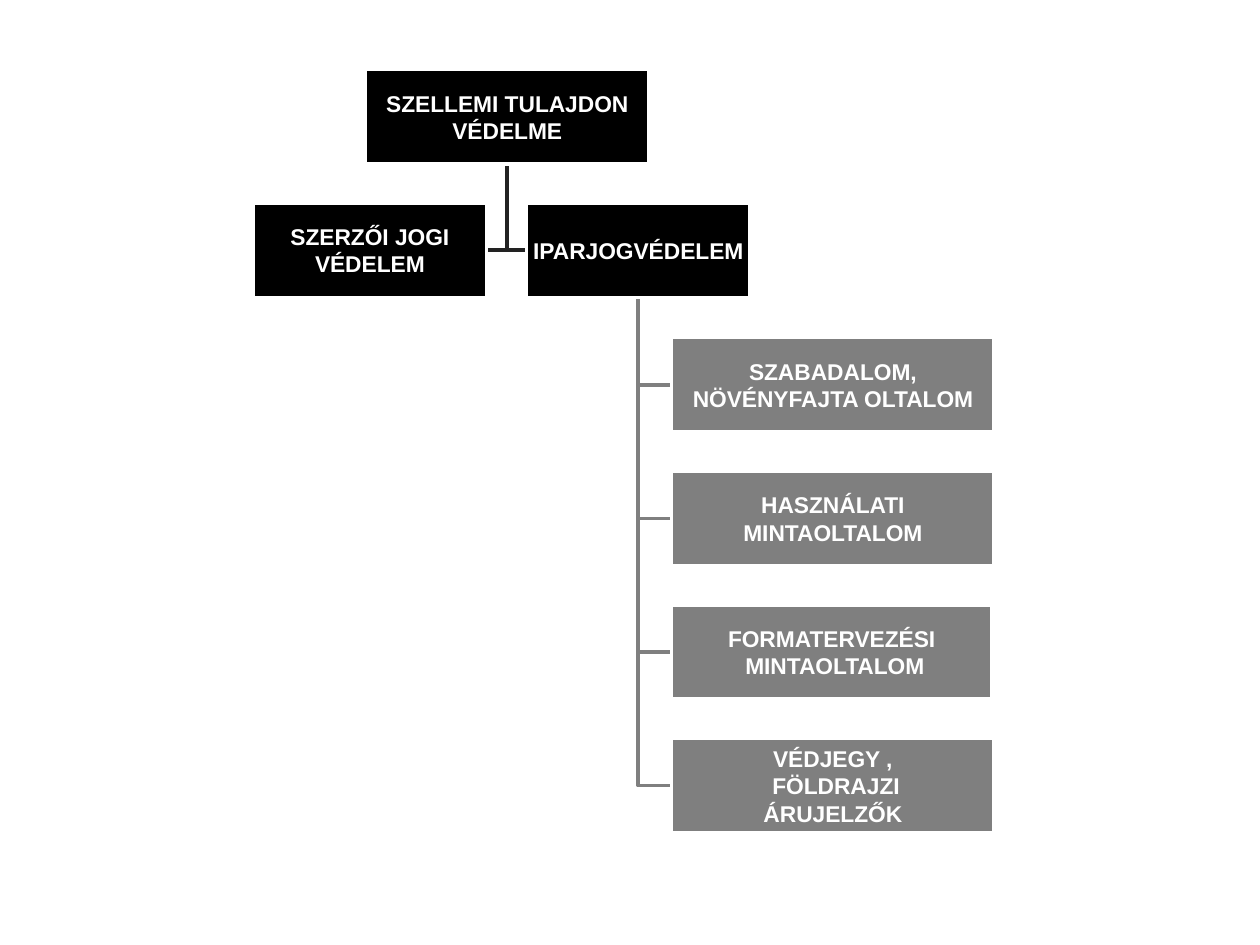
from pptx import Presentation
from pptx.dml.color import RGBColor as Rgb
from pptx.enum.shapes import MSO_SHAPE as Kind
from pptx.enum.text import MSO_ANCHOR as Anchor, PP_ALIGN as Align
from pptx.util import Inches, Pt

COLORS = {"black": "000000", "gray": "7F7F7F", "dark": "222222", "white": "FFFFFF"}
HIGH = 0.75
STEP = 1.06
TOP = 0.55


class Chart:
    font = "Arial"
    size = Pt(13)
    width = Pt(2)
    inset = Inches(0.01)

    def __init__(self, slide):
        self.slide = slide

    def color(self, name):
        return Rgb.from_string(COLORS[name])

    def border(self, shape, name):
        shape.shadow.inherit = False
        shape.line.color.rgb = self.color(name)
        shape.line.width = self.width

    def link(self, start, end, name):
        (x, y), (right, low) = start, end
        form = self.slide.shapes.build_freeform(Inches(x), Inches(y))
        turns = [(Inches(x), Inches(low)), (Inches(right), Inches(low))]
        form.add_line_segments(turns, close=False)
        shape = form.convert_to_shape()
        shape.fill.background()
        self.border(shape, name)

    def box(self, left, top, wide, fill, lines):
        shape = self.slide.shapes.add_shape(
            Kind.RECTANGLE, Inches(left), Inches(top), Inches(wide), Inches(HIGH))
        shape.fill.solid()
        shape.fill.fore_color.rgb = self.color(fill)
        self.border(shape, "white")
        frame = shape.text_frame
        frame.word_wrap = True
        frame.vertical_anchor = Anchor.MIDDLE
        frame.margin_left = frame.margin_right = self.inset
        frame.margin_top = frame.margin_bottom = self.inset
        for i, line in enumerate(lines):
            para = frame.add_paragraph() if i else frame.paragraphs[0]
            para.alignment = Align.CENTER
            run = para.add_run()
            run.text = line
            run.font.name = self.font
            run.font.size = self.size
            run.font.bold = True
            run.font.color.rgb = self.color("white")


def level(row):
    return TOP + STEP * row + (0.01 if row > 1 else 0)


def main():
    deck = Presentation()
    deck.slide_width, deck.slide_height = Inches(10), Inches(7.5)
    chart = Chart(deck.slides.add_slide(deck.slide_layouts[6]))

    root = (2.9, 2.25, ["SZELLEMI TULAJDON VÉDELME"])
    rights = (2.01, 1.85, ["SZERZŐI JOGI VÉDELEM"])
    trade = (4.18, 1.77, ["IPARJOGVÉDELEM"])
    leaf = 5.33
    leaves = [
        (2.56, ["SZABADALOM,", "NÖVÉNYFAJTA OLTALOM"]),
        (2.56, ["HASZNÁLATI", "MINTAOLTALOM"]),
        (2.54, ["FORMATERVEZÉSI", " MINTAOLTALOM"]),
        (2.56, ["VÉDJEGY ,", " FÖLDRAJZI", "ÁRUJELZŐK"]),
    ]

    stem = (trade[0] + trade[1] / 2, level(1) + HIGH)
    for row in range(len(leaves) + 1, 1, -1):
        chart.link(stem, (leaf, level(row) + HIGH / 2), "gray")
    stem = (root[0] + root[1] / 2, level(0) + HIGH)
    for side in (trade[0], rights[0] + rights[1]):
        chart.link(stem, (side, level(1) + HIGH / 2), "dark")

    for row, (left, wide, lines) in ((0, root), (1, rights), (1, trade)):
        chart.box(left, level(row), wide, "black", lines)
    for row, (wide, lines) in enumerate(leaves, 2):
        chart.box(leaf, level(row), wide, "gray", lines)

    deck.save("out.pptx")


if __name__ == "__main__":
    main()
